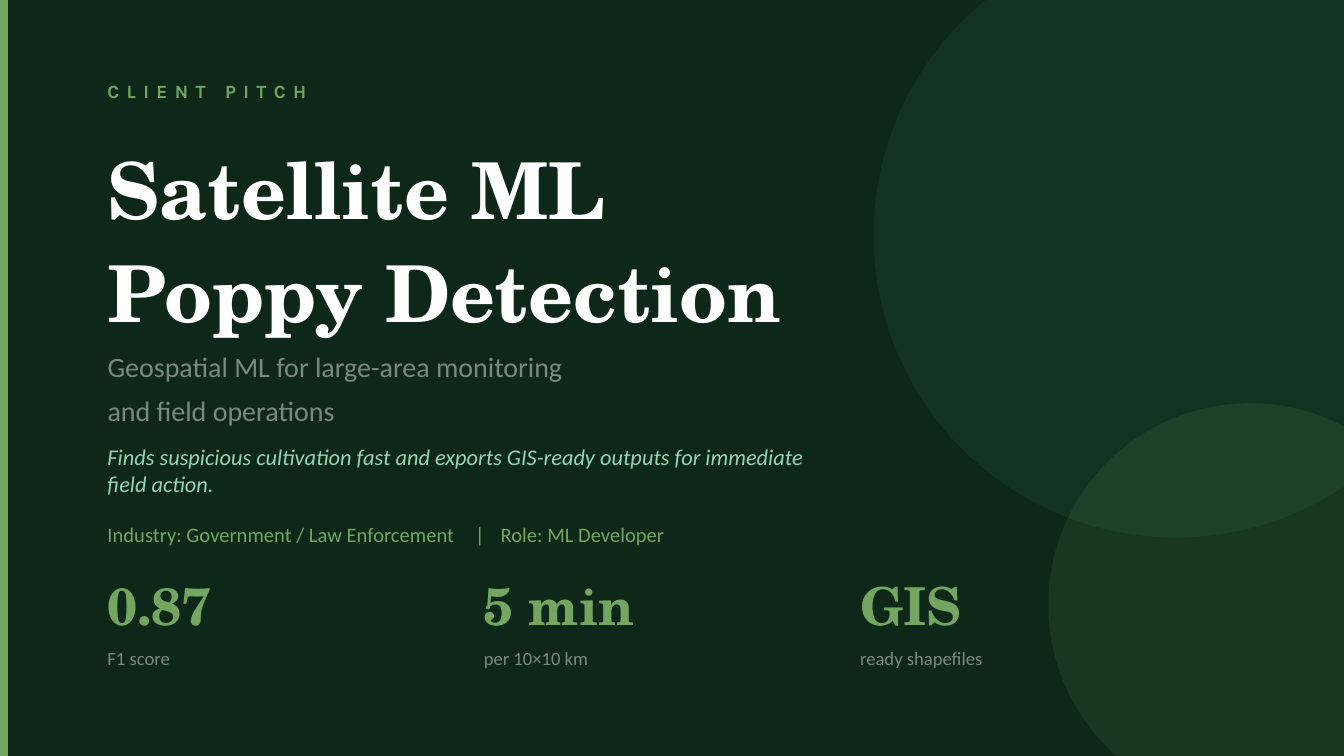
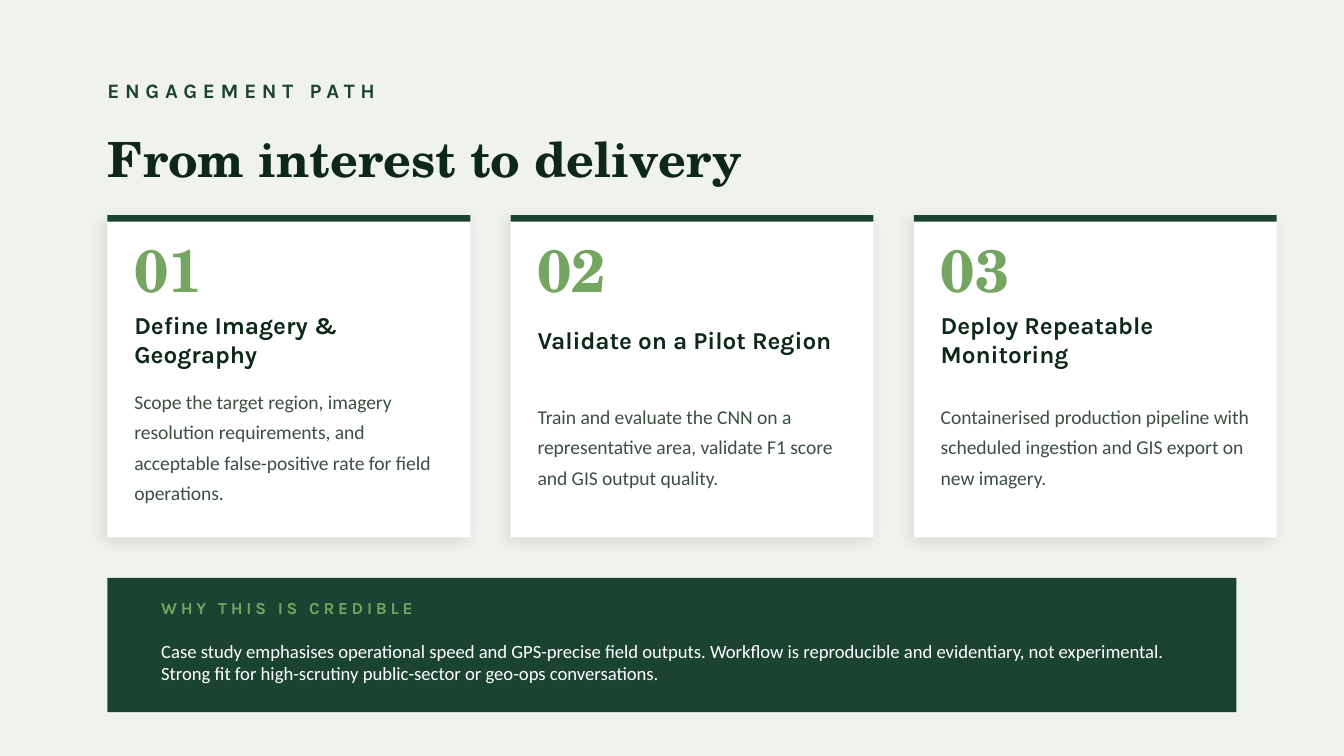
"""Build a two-slide pitch deck for satellite poppy detection."""
from lxml import etree
from pptx import Presentation
from pptx import util as u
from pptx.dml.color import RGBColor
from pptx.enum import shapes, text
from pptx.oxml.ns import qn

PX = 4572
WIDTH, HEIGHT = 2000, 1125
LEFT = 160

NIGHT = RGBColor(0x0D, 0x28, 0x18)
FOREST = RGBColor(0x1B, 0x43, 0x32)
LEAF = RGBColor(0x74, 0xA6, 0x61)
MINT = RGBColor(0x95, 0xD5, 0xB2)
SAGE = RGBColor(0x7A, 0x8A, 0x7E)
MOSS = RGBColor(0x3D, 0x4F, 0x42)
PAPER = RGBColor(0xF0, 0xF2, 0xED)
WHITE = RGBColor(0xFF, 0xFF, 0xFF)

SERIF, SANS, LABEL = "TeX Gyre Schola", "Calibri", "Karla"

METRICS = [
    ("0.87", "F1 score"),
    ("5 min", "per 10×10 km"),
    ("GIS", "ready shapefiles"),
]
STEPS = [
    ("Define Imagery & Geography",
     "Scope the target region, imagery resolution requirements, and "
     "acceptable false-positive rate for field operations."),
    ("Validate on a Pilot Region",
     "Train and evaluate the CNN on a representative area, validate F1 score "
     "and GIS output quality."),
    ("Deploy Repeatable Monitoring",
     "Containerised production pipeline with scheduled ingestion and GIS "
     "export on new imagery."),
]


def write(sp, words, size=10, color=WHITE, font=SANS, bold=False, italic=False,
          spacing=None, tracking=0, tabs=()):
    """Fill a shape with one formatted paragraph per line of words."""
    tf = sp.text_frame
    tf.word_wrap = True
    tf.auto_size = text.MSO_AUTO_SIZE.NONE
    tf.vertical_anchor = text.MSO_ANCHOR.MIDDLE
    tf.margin_left = tf.margin_top = tf.margin_right = tf.margin_bottom = 0
    for i, line in enumerate(words.split("\n")):
        p = tf.add_paragraph() if i else tf.paragraphs[0]
        p.alignment = text.PP_ALIGN.LEFT
        p.space_before = u.Pt(0)
        if spacing:
            p.line_spacing = spacing
        if tabs:
            stops = etree.SubElement(p._p.get_or_add_pPr(), qn("a:tabLst"))
            for stop in tabs:
                etree.SubElement(stops, qn("a:tab"), pos=str(stop * PX), algn="l")
        r = p.add_run()
        r.text = line
        r.font.size, r.font.name = u.Pt(size), font
        r.font.bold, r.font.italic = bold, italic
        r.font.color.rgb = color
        if tracking:
            r._r.get_or_add_rPr().set("spc", str(tracking * 100))


class Deck:
    """Hold the presentation, its style and the current slide."""

    def __init__(self):
        """Start an empty deck."""
        self.prs = Presentation()
        self.prs.slide_width = u.Emu(WIDTH * PX)
        self.prs.slide_height = u.Emu(HEIGHT * PX)
        self.s = None

    def slide(self, layout, background):
        """Add a slide on a plain background."""
        self.s = self.prs.slides.add_slide(self.prs.slide_layouts[layout])
        fill = self.s.background.fill
        fill.solid()
        fill.fore_color.rgb = background

    def placeholder(self, idx, words, x, y, w, h, **style):
        """Move and fill a template placeholder."""
        sp = self.s.placeholders[idx]
        sp.left, sp.top, sp.width, sp.height = (u.Emu(v * PX) for v in (x, y, w, h))
        write(sp, words, **style)

    def title(self, words, *box, **style):
        """Fill the title placeholder."""
        self.placeholder(0, words, *box, font=SERIF, bold=True, **style)

    def text(self, words, *box, **style):
        """Add a text box."""
        write(self.s.shapes.add_textbox(*(u.Emu(v * PX) for v in box)), words, **style)

    def label(self, words, *box, **style):
        """Add a bold label."""
        self.text(words, *box, font=LABEL, bold=True, **style)

    def figure(self, words, *box, **style):
        """Add a large green figure."""
        self.text(words, *box, font=SERIF, bold=True, color=LEAF, **style)

    def shape(self, *box, color, kind=shapes.MSO_SHAPE.RECTANGLE, opacity=100,
              shadow=False):
        """Add a borderless filled shape."""
        sp = self.s.shapes.add_shape(kind, *(u.Emu(v * PX) for v in box))
        sp.fill.solid()
        sp.fill.fore_color.rgb = color
        sp.line.fill.background()
        sp.shadow.inherit = False
        spPr = sp._element.spPr
        if opacity < 100:
            etree.SubElement(spPr.find(".//" + qn("a:srgbClr")), qn("a:alpha"),
                             val=str(opacity * 1000))
        if shadow:
            outer = etree.SubElement(
                spPr.find(qn("a:effectLst")), qn("a:outerShdw"),
                blurRad=str(u.Pt(8)), dist=str(u.Pt(3)), dir=str(135 * 60000),
                algn="bl", rotWithShape="0")
            tint = etree.SubElement(outer, qn("a:srgbClr"), val="000000")
            etree.SubElement(tint, qn("a:alpha"), val="10000")

    def circle(self, x, y, size, color, opacity):
        """Add a translucent circle."""
        self.shape(x, y, size, size, color=color, opacity=opacity,
                   kind=shapes.MSO_SHAPE.OVAL)

    def metric(self, x, value, caption):
        """Add a figure with its caption."""
        self.figure(value, x, 850, 500, 100, size=28)
        self.text(caption, x, 950, 500, 60, color=SAGE)

    def card(self, x, number, heading, body):
        """Add a numbered step card."""
        self.shape(x, 320, 540, 480, color=WHITE, shadow=True)
        self.shape(x, 320, 540, 10, color=FOREST)
        x += 40
        self.figure(f"{number:02}", x, 350, 160, 100, size=32)
        self.label(heading, x, 460, 460, 90, size=13, color=NIGHT)
        self.text(body, x, 560, 460, 200, size=10.5, color=MOSS, spacing=1.3)


def cover(deck):
    """Build the cover slide."""
    deck.slide(0, NIGHT)
    deck.circle(1300, -100, 900, FOREST, 40)
    deck.circle(1560, 600, 600, LEAF, 12)
    deck.shape(0, 0, 12, HEIGHT, color=LEAF)
    deck.label("CLIENT PITCH", LEFT, 100, 600, 70, color=LEAF, tracking=4)
    deck.title("Satellite ML\nPoppy Detection", LEFT, 220, 1200, 260,
               size=42, spacing=1.1)
    deck.placeholder(1, "Geospatial ML for large-area monitoring\nand field operations",
                     LEFT, 500, 1100, 140, size=15, color=SAGE, spacing=1.3)
    deck.text("Finds suspicious cultivation fast and exports GIS-ready outputs "
              "for immediate field action.",
              LEFT, 660, 1100, 80, size=12, color=MINT, italic=True)
    deck.text("Industry: Government / Law Enforcement\t|\tRole: ML Developer",
              LEFT, 760, 1100, 70, size=11, color=LEAF, tabs=(547, 585))
    for i, (value, caption) in enumerate(METRICS):
        deck.metric(LEFT + i * 560, value, caption)


def engagement(deck):
    """Build the engagement path slide."""
    deck.slide(5, PAPER)
    deck.label("ENGAGEMENT PATH", LEFT, 100, 1000, 70, size=11, color=FOREST,
               tracking=3)
    deck.title("From interest to delivery", LEFT, 180, 1600, 110, size=26, color=NIGHT)
    for i, (heading, body) in enumerate(STEPS):
        deck.card(LEFT + i * 600, i + 1, heading, body)
    deck.shape(LEFT, 860, 1680, 200, color=FOREST)
    deck.label("WHY THIS IS CREDIBLE", LEFT + 80, 880, 600, 50, size=9, color=LEAF,
               tracking=2)
    deck.text("Case study emphasises operational speed and GPS-precise field outputs. "
              "Workflow is reproducible and evidentiary, not experimental. Strong fit "
              "for high-scrutiny public-sector or geo-ops conversations.",
              LEFT + 80, 930, 1500, 110)


def main():
    """Build and save the deck."""
    deck = Deck()
    cover(deck)
    engagement(deck)
    deck.prs.save("out.pptx")


if __name__ == "__main__":
    main()
